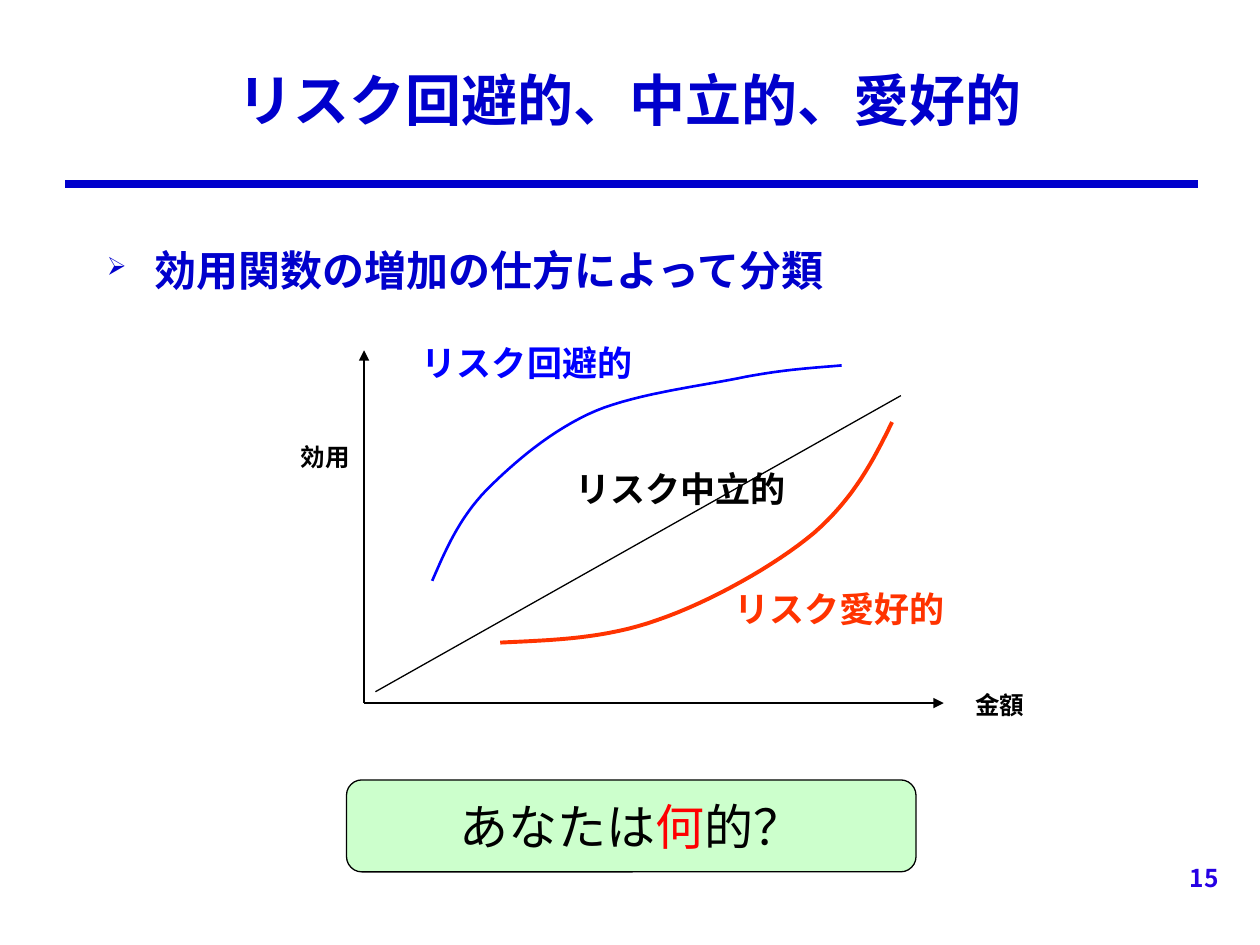
"""Build a slide that sorts utility curves by attitude to risk."""
from lxml import etree
from pptx import Presentation
from pptx.dml.color import RGBColor
from pptx.enum.shapes import MSO_CONNECTOR, MSO_SHAPE
from pptx.enum.text import MSO_ANCHOR, PP_ALIGN
from pptx.oxml.ns import qn
from pptx.util import Inches, Pt

LINE, ROUND = MSO_CONNECTOR.STRAIGHT, MSO_SHAPE.ROUNDED_RECTANGLE
MID, TOP = MSO_ANCHOR.MIDDLE, MSO_ANCHOR.TOP
LEFT, CENTER, RIGHT = PP_ALIGN.LEFT, PP_ALIGN.CENTER, PP_ALIGN.RIGHT
SANS, LATIN = "Noto Sans CJK JP", "Arial"
HUE = {"navy": "0000CC", "num": "2600E4", "ink": "000000", "blue": "0000FF",
       "flame": "FF3300", "red": "FF0000", "mint": "CCFFCC"}
COLS, ROWS, STEPS = 100, 75, 16

deck = Presentation()
deck.slide_width, deck.slide_height = Inches(10), Inches(7.5)
col, row = deck.slide_width / COLS, deck.slide_height / ROWS
slide = deck.slides.add_slide(deck.slide_layouts[5])
shapes = slide.shapes


def grid(*nums):
    return [round(n * (row if i % 2 else col)) for i, n in enumerate(nums)]


def write(shape, runs, size, font=SANS, bold=True, align=LEFT, anchor=TOP, wrap=True):
    frame = shape.text_frame
    frame.word_wrap, frame.vertical_anchor = wrap, anchor
    para = frame.paragraphs[0]
    para.alignment = align
    for text, hue in runs:
        run = para.add_run()
        run.text = text
        run.font.size, run.font.bold, run.font.name = Pt(size), bold, font
        run.font.color.rgb = RGBColor.from_string(HUE[hue])
        etree.SubElement(run.font._element, qn("a:ea"), typeface=SANS)
    return para


title = shapes.title
title.left, title.top, title.width, title.height = grid(7.5, 2.5, 85, 10.8)
write(title, [("リスク回避的、中立的、愛好的", "navy")], 32, align=CENTER, anchor=MID)

page = shapes.add_textbox(*grid(90.4, 68, 7.3, 5))
write(page, [("15", "num")], 14, align=RIGHT)

body = shapes.add_textbox(*grid(7.5, 18.3, 85, 7))
point = write(body, [("効用関数の増加の仕方によって分類", "navy")], 24)
point.line_spacing = 1.15
props = point._p.get_or_add_pPr()
props.set("marL", str(Inches(0.38)))
props.set("indent", str(-Inches(0.38)))
etree.SubElement(props, qn("a:buSzPct"), val="60000")
etree.SubElement(props, qn("a:buChar"), char="➢")

lines = [
    ((5.2, 14.6, 95.1, 14.6), "navy", 4.5, False),
    ((28.9, 55.8, 74.9, 55.8), "ink", 0.75, True),
    ((28.9, 55.8, 28.9, 27.8), "ink", 0.75, True),
    ((29.8, 54.9, 71.5, 31.4), "ink", 0.75, False),
]
for ends, hue, width, arrow in lines:
    line = shapes.add_connector(LINE, *grid(*ends))
    line.line.width = Pt(width)
    line.line.color.rgb = RGBColor.from_string(HUE[hue])
    if arrow:
        etree.SubElement(line.line._get_or_add_ln(), qn("a:tailEnd"), type="triangle")
    etree.SubElement(line._element.spPr, qn("a:effectLst"))

labels = [
    ("効用", 22.9, 34.6, 10.8, 3.3, 14, "ink"),
    ("金額", 76.4, 54.3, 10.8, 3.3, 14, "ink"),
    ("リスク回避的", 32.5, 26.6, 21.2, 4.4, 20, "blue"),
    ("リスク中立的", 44.7, 36.6, 25, 4.4, 20, "ink"),
    ("リスク愛好的", 57.3, 46.1, 23, 4.4, 20, "flame"),
]
for text, left, top, width, height, size, hue in labels:
    label = shapes.add_textbox(*grid(left, top, width, height))
    write(label, [(text, hue)], size, LATIN)

curves = [
    ("flame", 2.25, [(39.7, 51), (43.9, 50.8), (48, 50.7), (52.2, 49.2), (56.3, 47.8),
                     (61.5, 44.9), (64.6, 42.3), (67.7, 39.6), (69.3, 36.6), (70.8, 33.5)]),
    ("blue", 1.5, [(34.3, 46.1), (35.4, 43.6), (36.4, 41.2), (38.6, 38.9), (40.8, 36.7),
                   (43.8, 34.1), (47.3, 32.6), (50.7, 31.2), (55.9, 30.6), (59.2, 29.9),
                   (62.4, 29.3), (64.6, 29.2), (66.8, 29)]),
]
for hue, width, knots in curves:
    dots = []
    for i in range(0, len(knots) - 1, 3):
        for step in range(1, STEPS + 1):
            t = step / STEPS
            u = 1 - t
            parts = (u ** 3, 3 * u * u * t, 3 * u * t * t, t ** 3)
            spot = [sum(p * k[axis] for p, k in zip(parts, knots[i:i + 4])) for axis in (0, 1)]
            dots.append(grid(*spot))
    pen = shapes.build_freeform(*grid(*knots[0]))
    pen.add_line_segments(dots, close=False)
    curve = pen.convert_to_shape()
    curve.shadow.inherit = False
    curve.fill.background()
    curve.line.width = Pt(width)
    curve.line.color.rgb = RGBColor.from_string(HUE[hue])

box = shapes.add_shape(ROUND, *grid(27.5, 61.9, 45.2, 7.3))
box.shadow.inherit = False
box.fill.solid()
box.fill.fore_color.rgb = RGBColor.from_string(HUE["mint"])
box.line.width = Pt(0.75)
box.line.color.rgb = RGBColor.from_string(HUE["ink"])
write(box, [("あなたは", "ink"), ("何", "red"), ("的？", "ink")], 28,
      bold=False, align=CENTER, anchor=MID, wrap=False)

deck.save("out.pptx")
